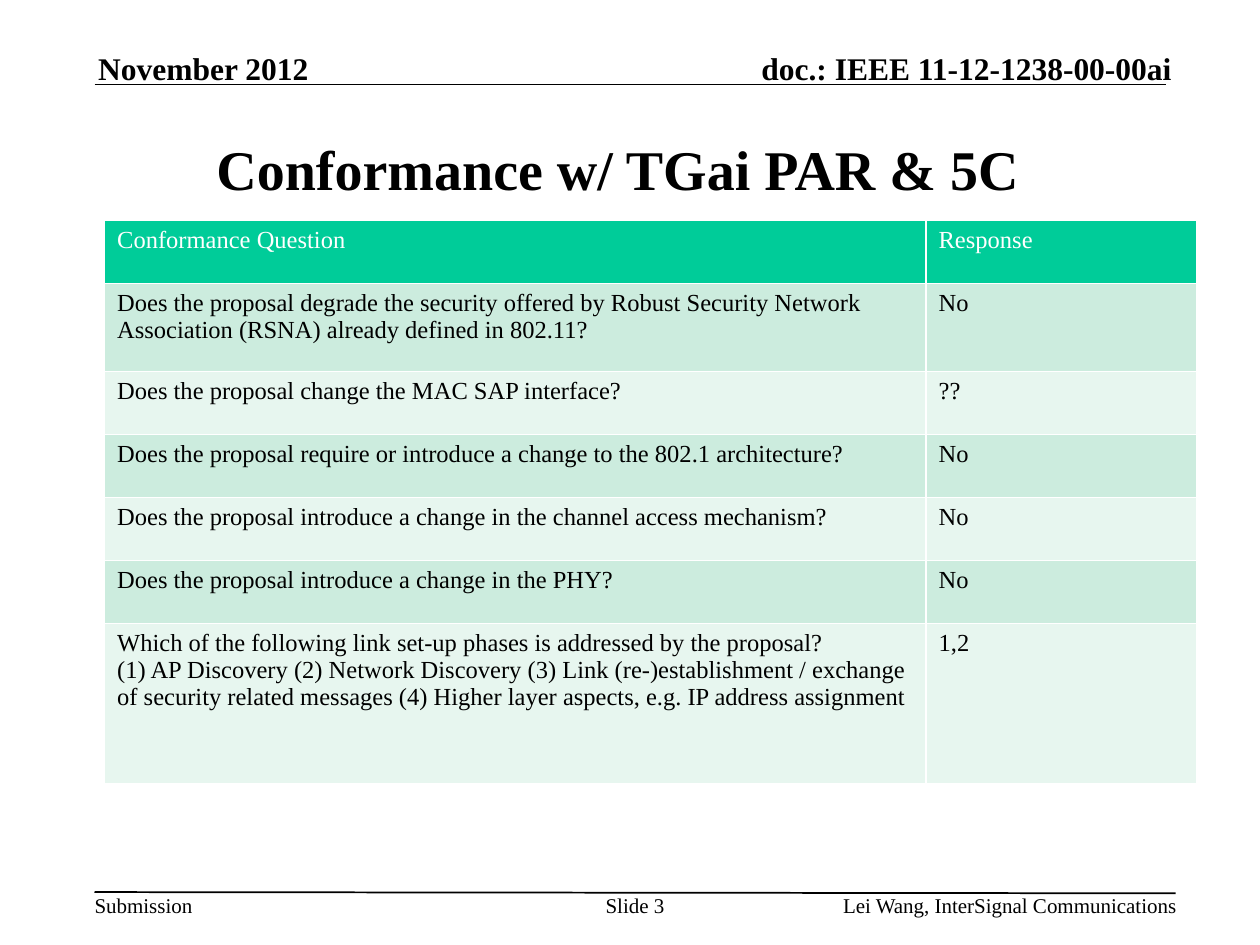
from dataclasses import dataclass

from lxml.etree import SubElement
from pptx import Presentation
from pptx.dml.color import RGBColor
from pptx.enum.shapes import MSO_CONNECTOR
from pptx.enum.text import MSO_ANCHOR, PP_ALIGN
from pptx.oxml import parse_xml
from pptx.oxml.ns import nsdecls, qn
from pptx.util import Inches, Pt


@dataclass(frozen=True)
class Theme:
    font: str = "Times New Roman"
    black: str = "000000"
    white: str = "FFFFFF"
    header_fill: str = "00CC99"
    bands: tuple = ("CCECDE", "E7F6EF")
    title_size: int = 32
    header_size: int = 18
    table_size: int = 14
    footer_size: int = 12
    line_width: int = 1


@dataclass(frozen=True)
class Label:
    text: str
    left: float
    top: float
    width: float
    height: float
    size: int
    align: PP_ALIGN = PP_ALIGN.LEFT
    bold: bool = False
    anchor: MSO_ANCHOR = MSO_ANCHOR.TOP


@dataclass(frozen=True)
class Rule:
    left: float
    top: float
    right: float
    bottom: float


@dataclass(frozen=True)
class TableRow:
    question: str
    response: str
    height: float = 0.5


THEME = Theme()

LABELS = [
    Label("November 2012", 0.78, 0.39, 2.6, 0.3, THEME.header_size,
          bold=True, anchor=MSO_ANCHOR.BOTTOM),
    Label("doc.: IEEE 11-12-1238-00-00ai", 5.47, 0.39, 3.83, 0.3, THEME.header_size,
          PP_ALIGN.RIGHT, True, MSO_ANCHOR.BOTTOM),
    Label("Submission", 0.75, 7.08, 0.78, 0.2, THEME.footer_size),
    Label("Slide 3", 4.75, 7.08, 0.58, 0.4, THEME.footer_size, PP_ALIGN.CENTER),
    Label("Lei Wang, InterSignal Communications", 6.12, 7.08, 3.22, 0.2,
          THEME.footer_size, PP_ALIGN.RIGHT),
]

RULES = [Rule(0.75, 0.67, 9.25, 0.67), Rule(0.75, 7.08, 9.33, 7.09)]

COLUMN_WIDTHS = (6.52, 2.15)
ROWS = [
    TableRow("Conformance Question", "Response"),
    TableRow("Does the proposal degrade the security offered by Robust Security Network "
             "Association (RSNA) already defined in 802.11?", "No", 0.7),
    TableRow("Does the proposal change the MAC SAP interface?", "??"),
    TableRow("Does the proposal require or introduce a change to the 802.1 architecture?", "No"),
    TableRow("Does the proposal introduce a change in the channel access mechanism?", "No"),
    TableRow("Does the proposal introduce a change in the PHY?", "No"),
    TableRow("Which of the following link set-up phases is addressed by the proposal?\n"
             "(1) AP Discovery (2) Network Discovery (3) Link (re-)establishment / exchange "
             "of security related messages (4) Higher layer aspects, e.g. IP address assignment",
             "1,2", 1.27),
]


def write_text(frame, text: str, size: int, color: str = THEME.black,
               align: PP_ALIGN = PP_ALIGN.LEFT, bold: bool = False) -> None:
    frame.text = text
    for para in frame.paragraphs:
        para.alignment = align
        para.font.name = THEME.font
        para.font.size = Pt(size)
        para.font.bold = bold
        para.font.color.rgb = RGBColor.from_string(color)


def add_label(page, label: Label) -> None:
    box = page.shapes.add_textbox(Inches(label.left), Inches(label.top),
                                  Inches(label.width), Inches(label.height))
    frame = box.text_frame
    frame.word_wrap = True
    frame.margin_left = frame.margin_right = frame.margin_top = frame.margin_bottom = 0
    frame.vertical_anchor = label.anchor
    write_text(frame, label.text, label.size, align=label.align, bold=label.bold)


def add_rule(page, rule: Rule) -> None:
    line = page.shapes.add_connector(MSO_CONNECTOR.STRAIGHT, Inches(rule.left), Inches(rule.top),
                                     Inches(rule.right), Inches(rule.bottom))
    line.line.width = Pt(THEME.line_width)
    line.line.color.rgb = RGBColor.from_string(THEME.black)
    SubElement(line._element.spPr, qn("a:effectLst"))


def style_cell(cell, text: str, fill: str, color: str) -> None:
    write_text(cell.text_frame, text, THEME.table_size, color)
    cell.fill.solid()
    cell.fill.fore_color.rgb = RGBColor.from_string(fill)
    # Borders come before the fill in the cell properties
    properties = cell._tc.get_or_add_tcPr()
    for position, side in enumerate(("lnL", "lnR", "lnT", "lnB")):
        properties.insert(position, parse_xml(
            f'<a:{side} {nsdecls("a")} w="{Pt(THEME.line_width)}"><a:solidFill>'
            f'<a:srgbClr val="{THEME.white}"/></a:solidFill></a:{side}>'))


def add_conformance_table(page) -> None:
    table = page.shapes.add_table(
        len(ROWS), len(COLUMN_WIDTHS), Inches(0.83), Inches(1.75), Inches(sum(COLUMN_WIDTHS)),
        Inches(sum(row.height for row in ROWS))).table
    table.first_row = table.horz_banding = False
    for column, width in zip(table.columns, COLUMN_WIDTHS):
        column.width = Inches(width)
    for index, row in enumerate(ROWS):
        table.rows[index].height = Inches(row.height)
        is_header = index == 0
        fill = THEME.header_fill if is_header else THEME.bands[(index - 1) % 2]
        color = THEME.white if is_header else THEME.black
        for column, text in enumerate((row.question, row.response)):
            style_cell(table.cell(index, column), text, fill, color)


def add_title(page) -> None:
    title = page.shapes.title
    title.left, title.top = Inches(0.71), Inches(0.75)
    title.width, title.height = Inches(8.5), Inches(1.17)
    title.text_frame.vertical_anchor = MSO_ANCHOR.MIDDLE
    write_text(title.text_frame, "Conformance w/ TGai PAR & 5C ", THEME.title_size,
               align=PP_ALIGN.CENTER, bold=True)


def main() -> None:
    deck = Presentation()
    deck.slide_width, deck.slide_height = Inches(10), Inches(7.5)
    page = deck.slides.add_slide(deck.slide_layouts[5])

    # Header and footer
    for rule in RULES:
        add_rule(page, rule)
    for label in LABELS:
        add_label(page, label)

    # Title and table
    add_title(page)
    add_conformance_table(page)
    deck.save("out.pptx")


if __name__ == "__main__":
    main()
